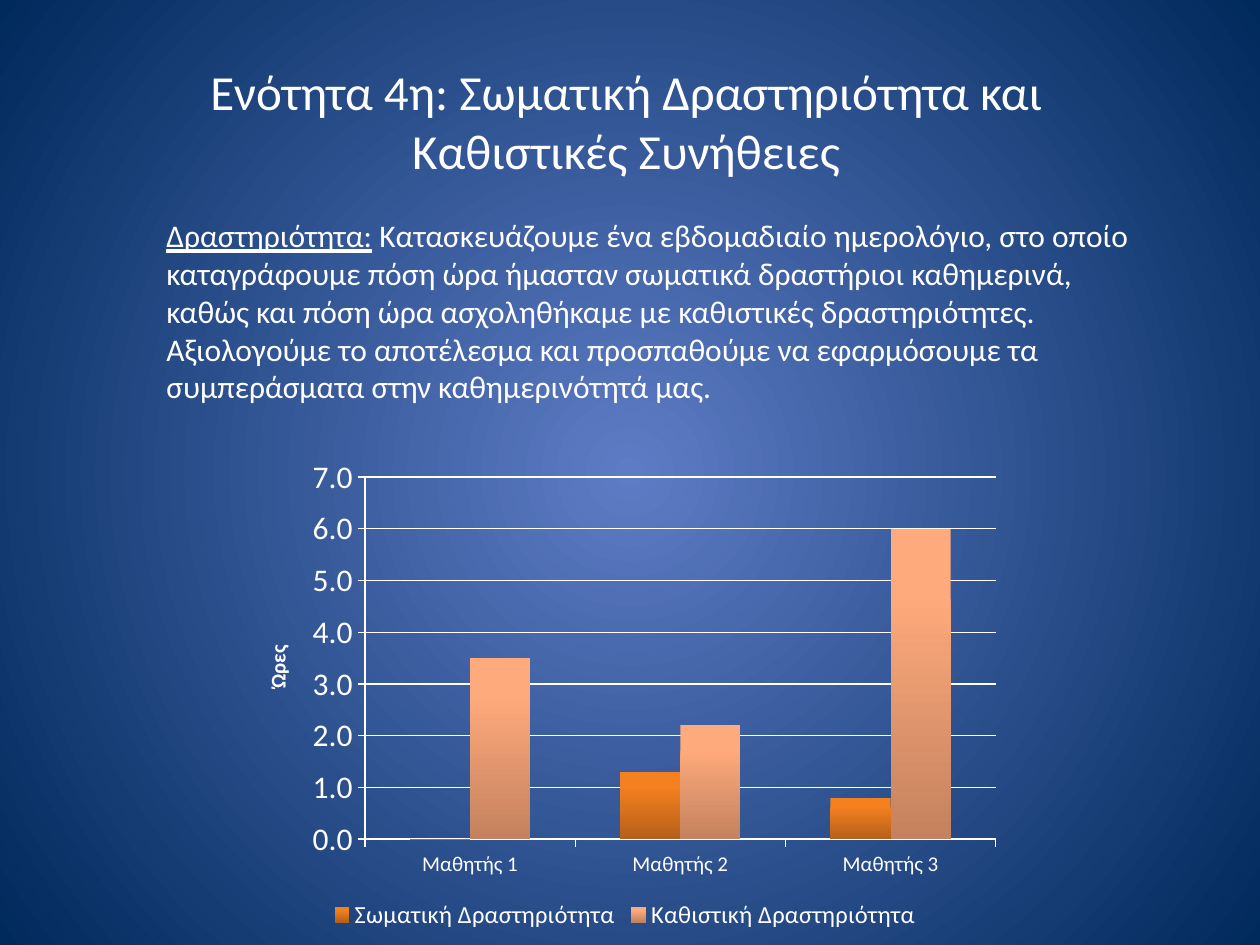
import pptx
import pptx.chart.data
import pptx.dml.color
import pptx.enum.chart
import pptx.enum.text
import pptx.oxml
import pptx.oxml.ns
import pptx.util

SCALE = 914400 / 126  # EMU in one px
WHITE = "FFFFFF"


def px(length):
    return pptx.util.Emu(round(length * SCALE))


def color(value):
    return pptx.dml.color.RGBColor.from_string(value)


class SlideBuilder:
    font_name = "Calibri"
    text_color = WHITE

    def __init__(self, slide):
        self.slide = slide

    def style_font(self, font, size, bold=False):
        font.name = self.font_name
        font.size = pptx.util.Pt(size)
        font.bold = bold
        font.color.rgb = color(self.text_color)

    def gradient(self, fill, start, end, angle=None):
        fill.gradient()
        for stop, value in zip(fill.gradient_stops, (start, end)):
            stop.color.rgb = color(value)
        if angle is not None:
            fill.gradient_angle = angle

    def radial_background(self, center, edge):
        self.gradient(self.slide.background.fill, center, edge)
        # A circular path takes the place of the linear direction
        linear = next(self.slide.background._cSld.iter(pptx.oxml.ns.qn("a:lin")))
        circle = pptx.oxml.parse_xml(
            f'<a:path {pptx.oxml.ns.nsdecls("a")} path="circle">'
            '<a:fillToRect l="50000" t="50000" r="50000" b="50000"/></a:path>')
        linear.getparent().replace(linear, circle)

    def text(self, box, parts, size, align=pptx.enum.text.PP_ALIGN.LEFT):
        """Each part is a pair: wording and whether it is underlined."""
        text_frame = self.slide.shapes.add_textbox(*map(px, box)).text_frame
        text_frame.word_wrap = True
        paragraph = text_frame.paragraphs[0]
        paragraph.alignment = align
        for wording, underline in parts:
            run = paragraph.add_run()
            run.text = wording
            self.style_font(run.font, size)
            run.font.underline = underline

    def style_axis(self, axis, size):
        self.style_font(axis.tick_labels.font, size)
        axis.major_tick_mark = pptx.enum.chart.XL_TICK_MARK.OUTSIDE
        axis.minor_tick_mark = pptx.enum.chart.XL_TICK_MARK.NONE
        self.style_line(axis.format.line)

    def style_line(self, line):
        line.color.rgb = color(self.text_color)
        line.width = pptx.util.Pt(0.75)

    def place_plot(self, chart, box, plot):
        """Fix the inner plot area, given in slide px, within the chart box."""
        fractions = {
            "x": (plot[0] - box[0]) / box[2],
            "y": (plot[1] - box[1]) / box[3],
            "w": plot[2] / box[2],
            "h": plot[3] / box[3],
        }
        sizes = "".join(f'<c:{key} val="{value:.3f}"/>' for key, value in fractions.items())
        layout = pptx.oxml.parse_xml(
            f'<c:layout {pptx.oxml.ns.nsdecls("c")}><c:manualLayout>'
            '<c:layoutTarget val="inner"/><c:xMode val="edge"/><c:yMode val="edge"/>'
            f'{sizes}</c:manualLayout></c:layout>')
        plot_area = chart._chartSpace.chart.plotArea
        for old_layout in plot_area.findall(pptx.oxml.ns.qn("c:layout")):
            plot_area.remove(old_layout)
        plot_area.insert(0, layout)

    def column_chart(self, box, plot, categories, series, value_title):
        """Each series is a name, its values and its top and bottom colours."""
        chart_data = pptx.chart.data.CategoryChartData(number_format="0.0")
        chart_data.categories = categories
        for name, values, _ in series:
            chart_data.add_series(name, values)
        chart = self.slide.shapes.add_chart(
            pptx.enum.chart.XL_CHART_TYPE.COLUMN_CLUSTERED,
            *map(px, box), chart_data).chart
        self.style_font(chart.font, 18)
        chart.has_title = False
        self.place_plot(chart, box, plot)

        # Columns
        columns = chart.plots[0]
        columns.gap_width = 150
        columns.vary_by_categories = False
        for column, (_, _, shades) in zip(columns.series, series):
            self.gradient(column.format.fill, *shades, angle=270)
            column.format.fill.gradient_stops[0].position = 0.2

        # Axes
        self.style_axis(chart.category_axis, 12)
        value_axis = chart.value_axis
        self.style_axis(value_axis, 18)
        value_axis.minimum_scale, value_axis.maximum_scale = 0, 7
        value_axis.major_unit = 1
        value_axis.tick_labels.number_format = "0.0"
        value_axis.tick_labels.number_format_is_linked = False
        self.style_line(value_axis.major_gridlines.format.line)
        title_frame = value_axis.axis_title.text_frame
        title_frame.text = value_title
        self.style_font(title_frame.paragraphs[0].runs[0].font, 12, bold=True)

        # Legend
        chart.has_legend = True
        chart.legend.position = pptx.enum.chart.XL_LEGEND_POSITION.BOTTOM
        chart.legend.include_in_layout = False
        self.style_font(chart.legend.font, 14)


def main():
    presentation = pptx.Presentation()
    presentation.slide_width, presentation.slide_height = px(1260), px(945)
    builder = SlideBuilder(presentation.slides.add_slide(presentation.slide_layouts[6]))
    builder.radial_background("5E7CC5", "00295C")

    # Heading
    builder.text(
        (105, 55, 1042, 131),
        [("Ενότητα 4η: Σωματική Δραστηριότητα και Καθιστικές Συνήθειες", False)],
        28, pptx.enum.text.PP_ALIGN.CENTER)

    # Activity description
    builder.text(
        (154, 210, 992, 204),
        [("Δραστηριότητα:", True),
         (" Κατασκευάζουμε ένα εβδομαδιαίο ημερολόγιο, στο οποίο καταγράφουμε "
          "πόση ώρα ήμασταν σωματικά δραστήριοι καθημερινά, καθώς και πόση ώρα "
          "ασχοληθήκαμε με καθιστικές δραστηριότητες. Αξιολογούμε το αποτέλεσμα "
          "και προσπαθούμε να εφαρμόσουμε τα συμπεράσματα στην καθημερινότητά μας.",
          False)],
        18)

    # Hours per student
    builder.column_chart(
        box=(238, 449, 774, 486),
        plot=(365, 477, 631, 362),
        categories=["Μαθητής 1", "Μαθητής 2", "Μαθητής 3"],
        series=[
            ("Σωματική Δραστηριότητα", (0, 1.3, 0.8), ("F58020", "B5601A")),
            ("Καθιστική Δραστηριότητα", (3.5, 2.2, 6), ("FFAA7C", "C4825E")),
        ],
        value_title="Ώρες")

    presentation.save("out.pptx")


if __name__ == "__main__":
    main()
